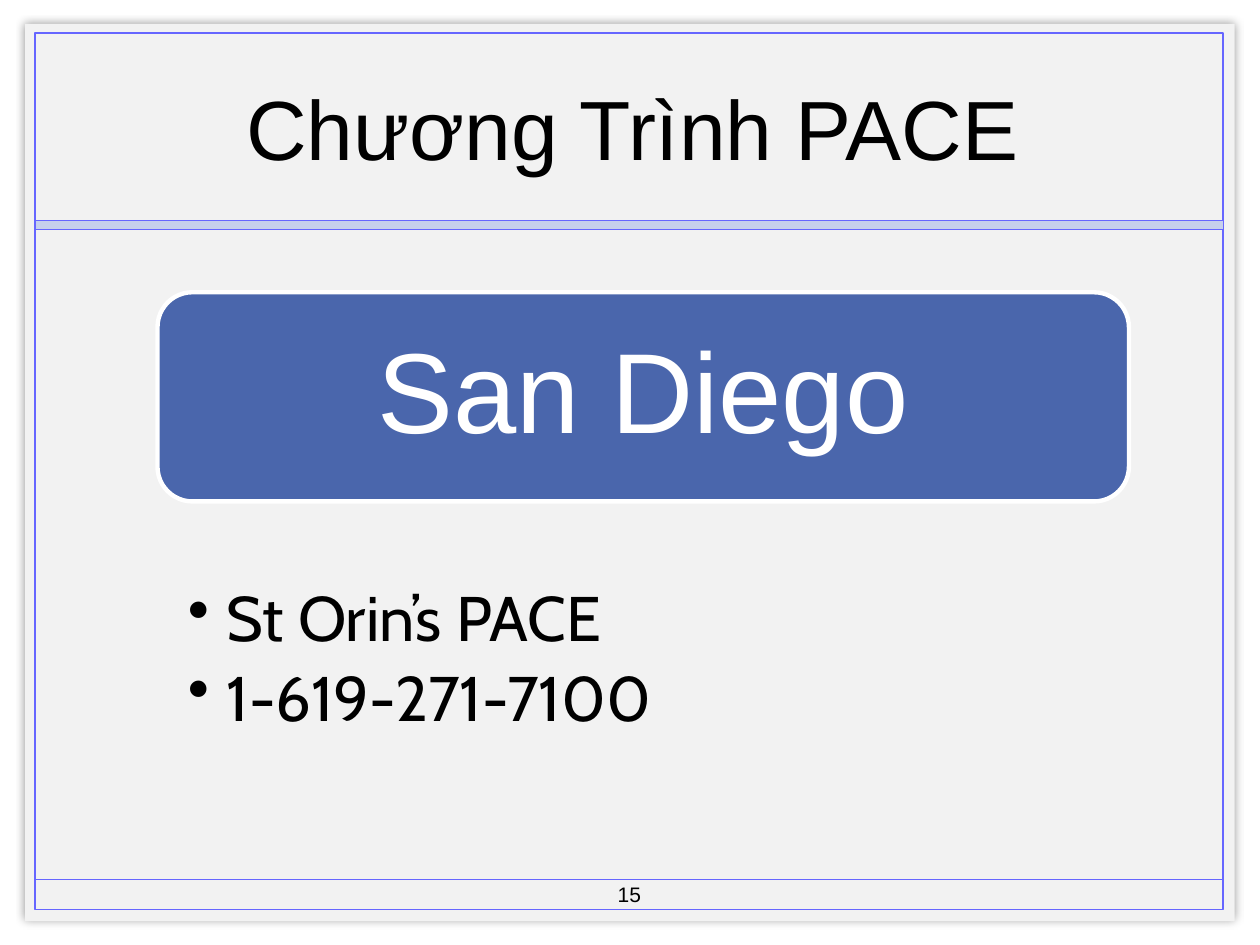
from lxml import etree
from pptx import Presentation
from pptx.dml.color import RGBColor
from pptx.enum import shapes, text
from pptx.oxml import parse_xml
from pptx.oxml.ns import nsdecls, qn
from pptx.util import Inches, Pt

# Content
TITLE = "Chương Trình PACE"
REGION = "San Diego"
DETAILS = ["St Orin’s PACE", "1-619-271-7100"]
PAGE = "15"

COLORS = {"panel": "F2F2F2", "frame": "6666FF", "band": "C6D0EC",
          "card": "4A66AC", "white": "FFFFFF", "black": "000000"}
FRAME_LEFT, FRAME_WIDTH = 0.28, 9.43
CARD_LEFT, CARD_WIDTH = 1.25, 7.71
FOOTER_Y = 6.98


def rgb(name):
    return RGBColor.from_string(COLORS[name])


def add_box(kind, box, fill=None, line=None, width=1):
    sp = slide.shapes.add_shape(kind, *map(Inches, box))
    sp.shadow.inherit = False
    if fill:
        sp.fill.solid()
        sp.fill.fore_color.rgb = rgb(fill)
    else:
        sp.fill.background()
    if line:
        sp.line.color.rgb = rgb(line)
        sp.line.width = Pt(width)
    else:
        sp.line.fill.background()
    return sp


def add_text(box, lines, size, font="Arial", color="black", insets=(0.1, 0.05, 0.1, 0.05),
             align=text.PP_ALIGN.CENTER, anchor=text.MSO_ANCHOR.MIDDLE,
             spacing=1.0, after=0):
    tf = slide.shapes.add_textbox(*map(Inches, box)).text_frame
    tf.word_wrap = True
    tf.vertical_anchor = anchor
    tf.margin_left, tf.margin_top, tf.margin_right, tf.margin_bottom = map(Inches, insets)
    for i, line in enumerate(lines):
        p = tf.add_paragraph() if i else tf.paragraphs[0]
        p.alignment, p.line_spacing, p.space_after = align, spacing, Pt(after)
        r = p.add_run()
        r.text = line
        r.font.size, r.font.name = Pt(size), font
        r.font.color.rgb = rgb(color)
    return tf


prs = Presentation()
prs.slide_width, prs.slide_height = Inches(10), Inches(7.5)
slide = prs.slides.add_slide(prs.slide_layouts[6])
RECT = shapes.MSO_SHAPE.RECTANGLE

# Panel with a soft shadow all round
panel = add_box(RECT, (0.2, 0.19, 9.6, 7.12), fill="panel")
effects = panel._element.spPr.find(qn("a:effectLst"))
effects.append(parse_xml(
    f'<a:outerShdw {nsdecls("a")} blurRad="{Pt(5)}" dist="0" dir="0" algn="ctr" rotWithShape="0">'
    f'<a:srgbClr val="{COLORS["black"]}"><a:alpha val="40000"/></a:srgbClr></a:outerShdw>'))

# Frame, footer rule and title band
add_box(RECT, (FRAME_LEFT, 0.26, FRAME_WIDTH, 6.96), line="frame")
rule = slide.shapes.add_connector(
    shapes.MSO_CONNECTOR.STRAIGHT, Inches(FRAME_LEFT), Inches(FOOTER_Y),
    Inches(FRAME_LEFT + FRAME_WIDTH), Inches(FOOTER_Y))
rule.line.color.rgb = rgb("frame")
rule.line.width = Pt(1)
etree.SubElement(rule._element.spPr, qn("a:effectLst"))
add_box(RECT, (FRAME_LEFT, 1.75, FRAME_WIDTH, 0.07), "band", "frame", 0.25)

# Title and page number
add_text((0.8, 0.27, 8.44, 1.47), [TITLE], 48)
add_text((4.58, 6.95, 0.83, 0.3), [PAGE], 12)

# Region card
add_box(shapes.MSO_SHAPE.ROUNDED_RECTANGLE, (CARD_LEFT, 2.32, CARD_WIDTH, 1.66),
        "card", "white", 2.5)
add_text((CARD_LEFT + 0.08, 2.4, CARD_WIDTH - 0.16, 1.5), [REGION], 65,
         color="white", insets=(0.27,) * 4, spacing=0.9)

# Bulleted contact details
details = add_text((CARD_LEFT, 4.62, CARD_WIDTH, 1.79), DETAILS, 36, font="Cabin",
                   insets=(0.24, 0.04, 0.25, 0.04), align=text.PP_ALIGN.LEFT,
                   anchor=text.MSO_ANCHOR.TOP, spacing=0.9, after=6.5)
for p in details.paragraphs:
    pPr = p._p.get_or_add_pPr()
    pPr.set("marL", str(Inches(0.31)))
    pPr.set("indent", str(Inches(-0.31)))
    etree.SubElement(pPr, qn("a:buChar"), char="•")

prs.save("out.pptx")
